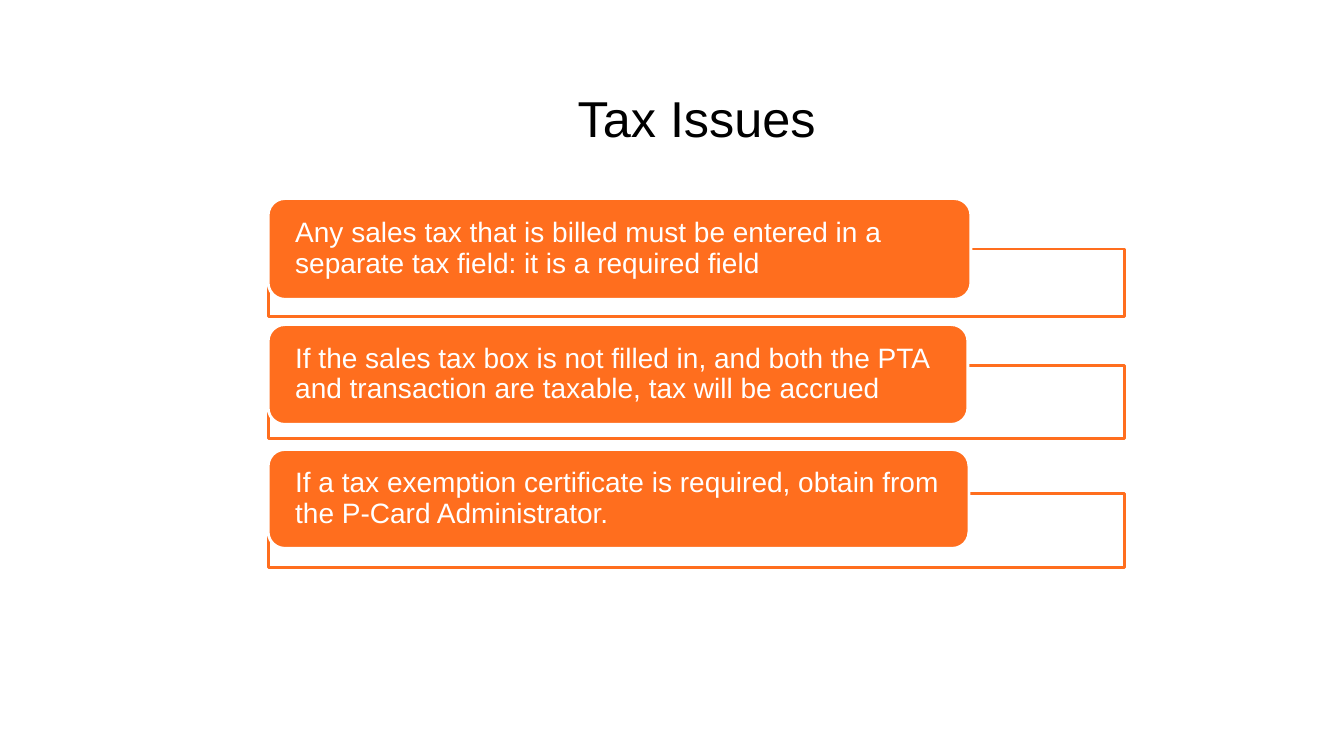
from pptx import Presentation
from pptx.dml.color import RGBColor
from pptx.enum.shapes import MSO_SHAPE
from pptx.enum.text import MSO_ANCHOR, MSO_AUTO_SIZE, PP_ALIGN
from pptx.util import Pt

RECT = MSO_SHAPE.RECTANGLE
ROUNDED = MSO_SHAPE.ROUNDED_RECTANGLE
TOP, MIDDLE = MSO_ANCHOR.TOP, MSO_ANCHOR.MIDDLE
LEFT, CENTER = PP_ALIGN.LEFT, PP_ALIGN.CENTER
NO_FIT = MSO_AUTO_SIZE.NONE

ORANGE = RGBColor(0xFF, 0x6E, 0x1E)
WHITE = RGBColor(0xFF, 0xFF, 0xFF)
BLACK = RGBColor(0x00, 0x00, 0x00)
FONT = "Arial"
EMU_PER_PX = 9144
LIST_LEFT = 266
FRAME_WIDTH = 849

ISSUES = [
    ("Any sales tax that is billed must be entered in a separate tax field: "
     "it is a required field", (247, 67), (197, 697, 100)),
    ("If the sales tax box is not filled in, and both the PTA and transaction "
     "are taxable, tax will be accrued", (363, 72), (322, 694, 99)),
    ("If a tax exemption certificate is required, obtain from the P-Card "
     "Administrator.", (490, 73), (446, 695, 98)),
]


def px(value):
    return value * EMU_PER_PX


def write(shape, wording, size, color, align, anchor, side, top):
    frame = shape.text_frame
    frame.word_wrap = True
    frame.auto_size = NO_FIT
    frame.vertical_anchor = anchor
    frame.margin_left = frame.margin_right = px(side)
    frame.margin_top, frame.margin_bottom = px(top), 0
    paragraph = frame.paragraphs[0]
    paragraph.alignment = align
    paragraph.line_spacing = 0.9 if anchor == MIDDLE else 1.0
    run = paragraph.add_run()
    run.text = wording
    run.font.name = FONT
    run.font.size = Pt(size)
    run.font.color.rgb = color


def add_title(slide, wording):
    title = slide.shapes.title
    title.left, title.top = px(192), px(76)
    title.width, title.height = px(998), px(96)
    write(title, wording, 36, BLACK, CENTER, TOP, 10, 10)


def add_box(slide, kind, left, top, width, height, fill, line):
    box = slide.shapes.add_shape(kind, px(left), px(top), px(width), px(height))
    box.shadow.inherit = False
    box.fill.solid()
    box.fill.fore_color.rgb = fill
    box.line.color.rgb = line
    box.line.width = Pt(2)
    return box


def add_issue(slide, wording, frame, label):
    frame_top, frame_height = frame
    add_box(slide, RECT, LIST_LEFT, frame_top, FRAME_WIDTH, frame_height,
            WHITE, ORANGE)
    label_top, label_width, label_height = label
    pill = add_box(slide, ROUNDED, LIST_LEFT, label_top, label_width,
                   label_height, ORANGE, WHITE)
    write(pill, wording, 20, WHITE, LEFT, MIDDLE, 22, 0)


def main():
    deck = Presentation()
    deck.slide_width, deck.slide_height = px(1333), px(750)
    slide = deck.slides.add_slide(deck.slide_layouts.get_by_name("Title Only"))
    add_title(slide, "Tax Issues")
    for wording, frame, label in ISSUES:
        add_issue(slide, wording, frame, label)
    deck.save("out.pptx")


if __name__ == "__main__":
    main()
